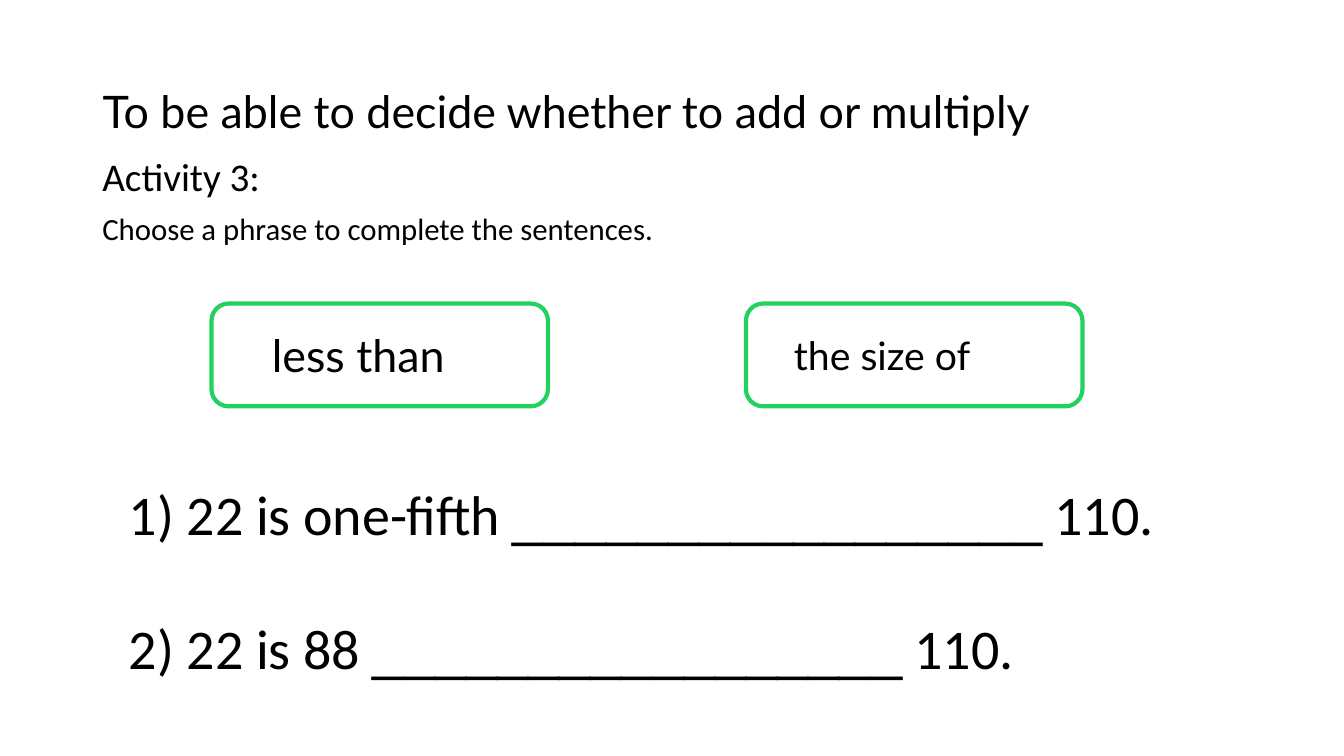
from lxml.etree import SubElement
from pptx import Presentation
from pptx.dml.color import RGBColor
from pptx.enum.shapes import MSO_SHAPE
from pptx.enum.text import MSO_ANCHOR, MSO_AUTO_SIZE, PP_ALIGN
from pptx.oxml.ns import qn
from pptx.util import Cm, Pt

COLORS = {"text": "000000", "background": "FFFFFF", "border": "23D160"}


def add_run(paragraph, text, size, font_name):
    run = paragraph.add_run()
    run.text = text
    run.font.size = Pt(size)
    run.font.name = font_name
    run.font.color.rgb = RGBColor.from_string(COLORS["text"])


def add_text_frame(shapes, left, top, width, height):
    text_frame = shapes.add_textbox(Cm(left), Cm(top), Cm(width), Cm(height)).text_frame
    text_frame.word_wrap = True
    return text_frame


presentation = Presentation()
presentation.slide_width = Cm(33.87)
presentation.slide_height = Cm(19.05)
slide = presentation.slides.add_slide(presentation.slide_layouts[5])
slide.background.fill.solid()
slide.background.fill.fore_color.rgb = RGBColor.from_string(COLORS["background"])

title = slide.shapes.title
title.left, title.top, title.width, title.height = Cm(2.33), Cm(1.02), Cm(24.38), Cm(3.68)
title.text_frame.auto_size = MSO_AUTO_SIZE.NONE
title.text_frame.vertical_anchor = MSO_ANCHOR.MIDDLE
title_paragraph = title.text_frame.paragraphs[0]
title_paragraph.alignment = PP_ALIGN.LEFT
title_paragraph.line_spacing = 0.9
add_run(title_paragraph, "To be able to decide whether to add or multiply", 32, "Lato")

instructions = add_text_frame(slide.shapes, 2.33, 3.84, 29.72, 2.84)
activity = instructions.paragraphs[0]
activity.line_spacing = 0.9
add_run(activity, "Activity 3:", 28, "Calibri")
task = instructions.add_paragraph()
task.line_spacing = 0.9
task.space_before = Pt(10)
add_run(task, "Choose a phrase to complete the sentences.", 22, "Calibri")

sentences = add_text_frame(slide.shapes, 3, 11.96, 28.88, 5.38)
for index, opening in enumerate([" 22 is one-fifth ", " 22 is 88 "]):
    sentence = sentences.add_paragraph() if index else sentences.paragraphs[0]
    properties = sentence._p.get_or_add_pPr()
    properties.set("marL", str(Cm(0.97)))
    properties.set("indent", str(Cm(-0.97)))
    SubElement(properties, qn("a:buFont"), typeface="+mj-lt")
    SubElement(properties, qn("a:buAutoNum"), type="arabicParenR")
    if index:
        sentence.space_before = Pt(48)
    add_run(sentence, opening, 40, "Calibri")
    add_run(sentence, "_" * 17, 40, "Arial")
    add_run(sentence, " 110.", 40, "Calibri")

phrases = [
    ("less than", 32, 5.33, 6.6, 8.13, 6.07, 1.63),
    ("the size of", 28, 18.8, 19.76, 8.23, 6.25, 1.45),
]
for phrase, size, card_left, text_left, text_top, text_width, text_height in phrases:
    group = slide.shapes.add_group_shape()
    label = add_text_frame(group.shapes, text_left, text_top, text_width, text_height)
    add_run(label.paragraphs[0], phrase, size, "Lato")
    card = group.shapes.add_shape(
        MSO_SHAPE.ROUNDED_RECTANGLE, Cm(card_left), Cm(7.65), Cm(8.48), Cm(2.59)
    )
    card.shadow.inherit = False
    card.fill.background()
    card.line.color.rgb = RGBColor.from_string(COLORS["border"])
    card.line.width = Pt(3)

presentation.save("out.pptx")
